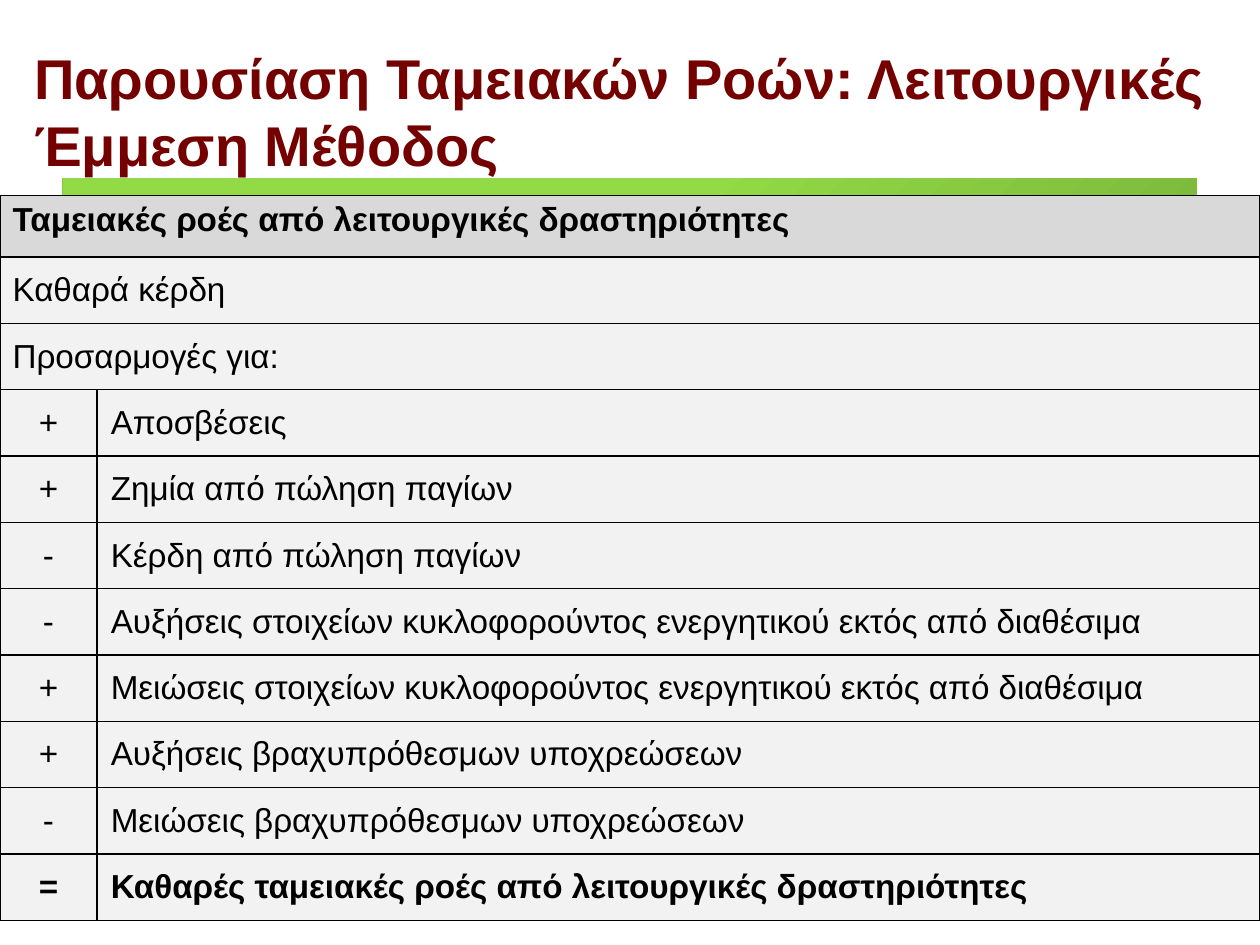
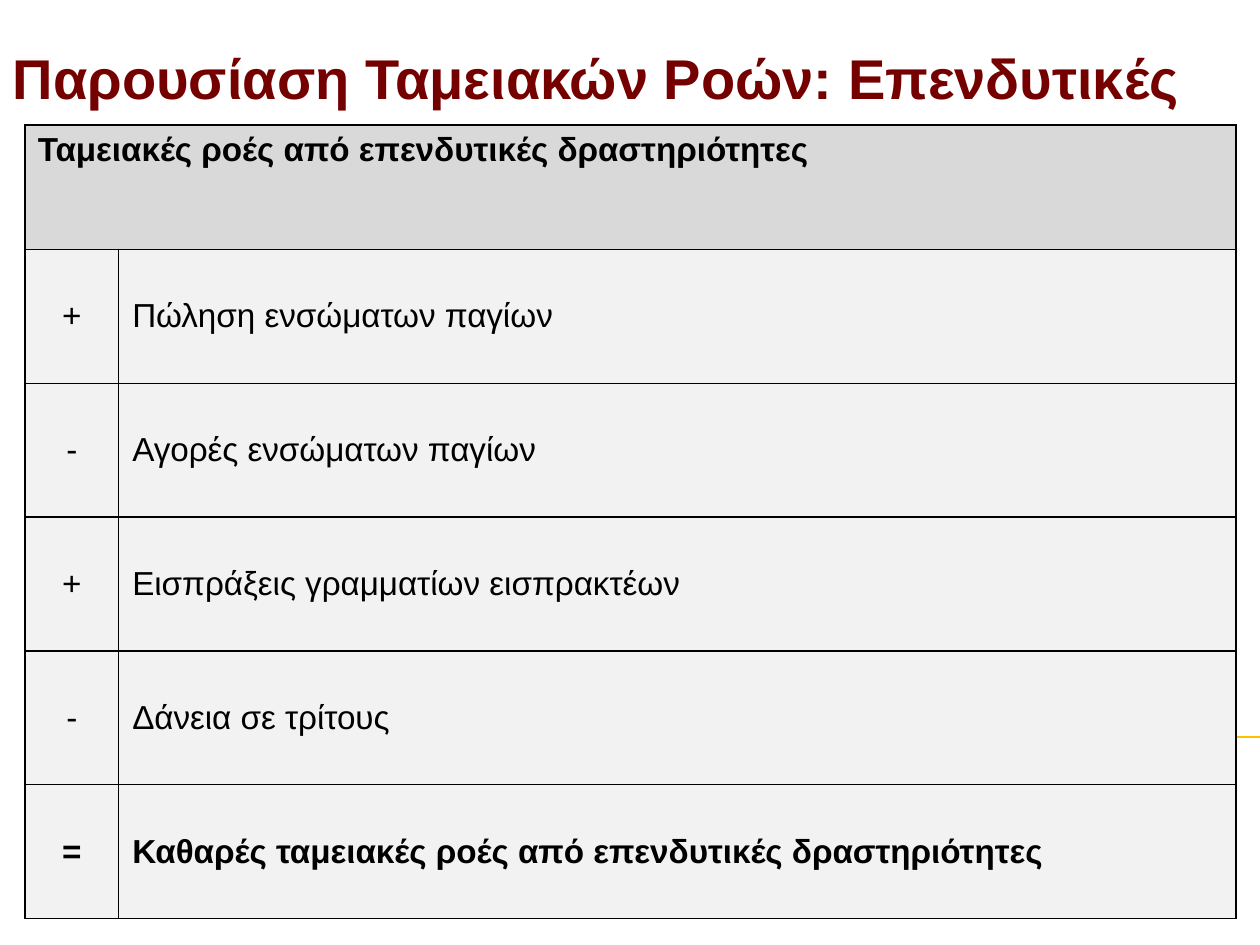
from copy import deepcopy
from lxml.etree import SubElement
from pptx import Presentation
from pptx.dml.color import RGBColor
from pptx.enum.shapes import MSO_CONNECTOR, MSO_SHAPE
from pptx.enum.text import MSO_ANCHOR, MSO_AUTO_SIZE, PP_ALIGN
from pptx.oxml.ns import qn
from pptx.util import Inches, Pt

HUES = {"title": "740000", "ink": "000000", "head": "D9D9D9", "row": "F2F2F2", "rule": "FFC000"}
GRADE = [(0, "57812A"), (0.33, "7BB73B"), (0.65, "92DA46")]
FONTS = {
    "title": {"name": "Arial", "size": Pt(32), "bold": True},
    "head": {"name": "Arial", "size": Pt(19), "bold": True},
    "row": {"name": "Arial", "size": Pt(19), "bold": False},
}
WIDE, HIGH = Inches(10), Inches(7.5)
PAGES = [
    {
        "title": "Παρουσίαση Ταμειακών Ροών: Λειτουργικές Έμμεση Μέθοδος",
        "title_box": (0.017, 0.039, 0.983, 0.157),
        "band": (0.05, 0.189, 0.9, 0.743),
        "grid": (0, 0.207, 1, 0.767),
        "sign": 0.077,
        "head": 0.065,
        "rows": [
            (None, "Ταμειακές ροές από λειτουργικές δραστηριότητες"),
            (None, "Καθαρά κέρδη"),
            (None, "Προσαρμογές για:"),
            ("+", "Αποσβέσεις"),
            ("+", "Ζημία από πώληση παγίων"),
            ("-", "Κέρδη από πώληση παγίων"),
            ("-", "Αυξήσεις στοιχείων κυκλοφορούντος ενεργητικού εκτός από διαθέσιμα"),
            ("+", "Μειώσεις στοιχείων κυκλοφορούντος ενεργητικού εκτός από διαθέσιμα"),
            ("+", "Αυξήσεις βραχυπρόθεσμων υποχρεώσεων"),
            ("-", "Μειώσεις βραχυπρόθεσμων υποχρεώσεων"),
            ("=", "Καθαρές ταμειακές ροές από λειτουργικές δραστηριότητες"),
        ],
    },
    {
        "title": "Παρουσίαση Ταμειακών Ροών: Επενδυτικές",
        "title_box": (0, 0.039, 1, 0.085),
        "band": None,
        "grid": (0.02, 0.132, 0.961, 0.84),
        "sign": 0.074,
        "head": 0.132,
        "rows": [
            (None, "Ταμειακές ροές από επενδυτικές δραστηριότητες"),
            ("+", "Πώληση ενσώματων παγίων"),
            ("-", "Αγορές ενσώματων παγίων"),
            ("+", "Εισπράξεις γραμματίων εισπρακτέων"),
            ("-", "Δάνεια σε τρίτους"),
            ("=", "Καθαρές ταμειακές ροές από επενδυτικές δραστηριότητες"),
        ],
    },
]


def place(box):
    return [int(part * side) for part, side in zip(box, (WIDE, HIGH, WIDE, HIGH))]


def write(frame, text, style, hue, align=PP_ALIGN.LEFT):
    line = frame.paragraphs[0]
    line.alignment = align
    run = line.add_run()
    run.text = text
    for key, value in style.items():
        setattr(run.font, key, value)
    run.font.color.rgb = RGBColor.from_string(HUES[hue])


deck = Presentation()
deck.slide_width, deck.slide_height = WIDE, HIGH
layout = deck.slide_layouts[5]

for page in PAGES:
    slide = deck.slides.add_slide(layout)
    shapes = slide.shapes

    if page is PAGES[0]:
        level = int(HIGH * 0.78)
        rule = shapes.add_connector(MSO_CONNECTOR.STRAIGHT, int(WIDE * 0.056), level, WIDE, level)
        rule.line.color.rgb = RGBColor.from_string(HUES["rule"])
        rule.line.width = Pt(0.75)
        SubElement(rule.element.spPr, qn("a:effectLst"))
        layout.placeholders[0].element.getparent().append(rule.element)

    if page["band"]:
        band = shapes.add_shape(MSO_SHAPE.RECTANGLE, *place(page["band"]))
        band.shadow.inherit = False
        band.line.fill.background()
        band.fill.gradient()
        band.fill.gradient_angle = 135
        stops = band.element.spPr.find(".//" + qn("a:gsLst"))
        stops.append(deepcopy(stops[0]))
        for stop, (spot, hue) in zip(band.fill.gradient_stops, GRADE):
            stop.position = spot
            stop.color.rgb = RGBColor.from_string(hue)

    rows = page["rows"]
    left, top, width, height = place(page["grid"])
    grid = shapes.add_table(len(rows), 2, left, top, width, height).table
    grid.first_row = grid.horz_banding = False
    sign_wide = int(WIDE * page["sign"])
    head_high = int(HIGH * page["head"])
    grid.columns[0].width = sign_wide
    grid.columns[1].width = width - sign_wide
    for at, (sign, label) in enumerate(rows):
        kind = "row" if at else "head"
        grid.rows[at].height = (height - head_high) // (len(rows) - 1) if at else head_high
        first, last = grid.cell(at, 0), grid.cell(at, 1)
        for cell in (first, last):
            props = cell._tc.get_or_add_tcPr()
            for side in "LRTB":
                edge = SubElement(props, qn("a:ln" + side), w=str(Pt(1)))
                fill = SubElement(edge, qn("a:solidFill"))
                SubElement(fill, qn("a:srgbClr"), val=HUES["ink"])
            cell.fill.solid()
            cell.fill.fore_color.rgb = RGBColor.from_string(HUES[kind])
            cell.vertical_anchor = MSO_ANCHOR.MIDDLE if at else MSO_ANCHOR.TOP
        style = FONTS["head" if sign == "=" else kind]
        if sign:
            write(first.text_frame, sign, style, "ink", PP_ALIGN.CENTER)
            last.margin_left = Inches(0.11)
            write(last.text_frame, label, style, "ink")
        else:
            first.merge(last)
            write(first.text_frame, label, style, "ink")

    title = shapes.title
    title.left, title.top, title.width, title.height = place(page["title_box"])
    frame = title.text_frame
    looks = {
        "word_wrap": True,
        "auto_size": MSO_AUTO_SIZE.SHAPE_TO_FIT_TEXT,
        "vertical_anchor": MSO_ANCHOR.TOP,
        "margin_left": Inches(0.1),
        "margin_right": Inches(0.1),
        "margin_top": Inches(0.05),
        "margin_bottom": Inches(0.05),
    }
    for key, value in looks.items():
        setattr(frame, key, value)
    write(frame, page["title"], FONTS["title"], "title")
    title.element.getparent().append(title.element)

deck.save("out.pptx")
